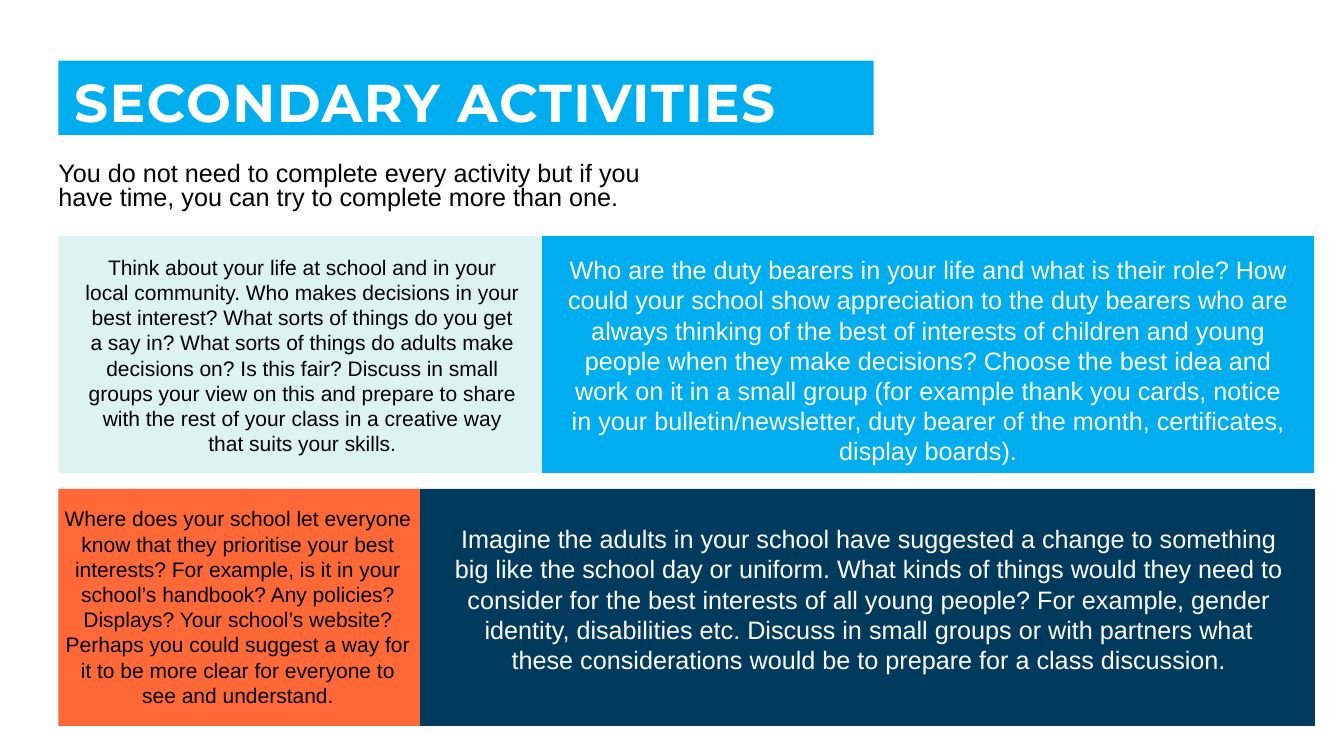
from dataclasses import dataclass

from pptx import Presentation
from pptx.dml.color import RGBColor as RGB
from pptx.enum.shapes import MSO_SHAPE as SHAPE
from pptx.enum.text import MSO_ANCHOR as ANCHOR, MSO_AUTO_SIZE as AUTO, PP_ALIGN as ALIGN
from pptx.util import Cm, Pt

TITLE = "SECONDARY ACTIVITIES"
INTRO = ("You do not need to complete every activity but if you have time, "
         "you can try to complete more than one.")


@dataclass(frozen=True)
class Theme:
    blue: str = "00AEEF"
    navy: str = "003B5E"
    mint: str = "DDF3F1"
    orange: str = "FF6937"
    white: str = "FFFFFF"
    black: str = "000000"
    heading: str = "Montserrat"
    body: str = "Arial"
    title_size: int = 38
    large: int = 18
    small: int = 15


T = Theme()

ROWS = [
    [
        dict(
            text="Think about your life at school and in your local community. "
                 "Who makes decisions in your best interest? What sorts of things "
                 "do you get a say in? What sorts of things do adults make "
                 "decisions on? Is this fair? Discuss in small groups your view on "
                 "this and prepare to share with the rest of your class in a "
                 "creative way that suits your skills.",
            width=12.19, fill=T.mint, color=T.black, size=T.small,
            margins=(0.66, 0.46, 0.55, 0)),
        dict(
            text="Who are the duty bearers in your life and what is their role? "
                 "How could your school show appreciation to the duty bearers who "
                 "are always thinking of the best of interests of children and "
                 "young people when they make decisions? Choose the best idea and "
                 "work on it in a small group (for example thank you cards, notice "
                 "in your bulletin/newsletter, duty bearer of the month, "
                 "certificates, display boards).",
            width=19.46, fill=T.blue, color=T.white, size=T.large,
            margins=(0.53, 0.46, 0.53, 0)),
    ],
    [
        dict(
            text="Where does your school let everyone know that they prioritise "
                 "your best interests? For example, is it in your school’s "
                 "handbook? Any policies? Displays? Your school’s website? Perhaps "
                 "you could suggest a way for it to be more clear for everyone to "
                 "see and understand.",
            width=9.12, fill=T.orange, color=T.black, size=T.small,
            margins=(0.15, 0.43, 0.22, 0)),
        dict(
            text="Imagine the adults in your school have suggested a change to "
                 "something big like the school day or uniform. What kinds of "
                 "things would they need to consider for the best interests of all "
                 "young people? For example, gender identity, disabilities etc. "
                 "Discuss in small groups or with partners what these "
                 "considerations would be to prepare for a class discussion.",
            width=22.55, fill=T.navy, color=T.white, size=T.large,
            margins=(0.84, 0.87, 0.78, 0)),
    ],
]

LEFT, TOP = 1.47, 5.95
PANEL_HEIGHT, ROW_GAP = 5.97, 0.4


def put_text(s, text, *, size, color, font=T.body, bold=False, align=ALIGN.LEFT,
             anchor=ANCHOR.TOP, margins=(0, 0, 0, 0), line=1.0, tracking=0):
    tf = s.text_frame
    tf.word_wrap = True
    tf.auto_size = AUTO.NONE
    tf.vertical_anchor = anchor
    tf.margin_left, tf.margin_top, tf.margin_right, tf.margin_bottom = map(Cm, margins)
    p = tf.paragraphs[0]
    p.alignment = align
    p.line_spacing = line
    p.space_before = Pt(0)
    r = p.add_run()
    r.text = text
    r.font.name = font
    r.font.size = Pt(size)
    r.font.bold = bold
    r.font.color.rgb = RGB.from_string(color)
    if tracking:
        r.font._element.set("spc", str(tracking * 100))


def fill_shape(s, color):
    s.fill.solid()
    s.fill.fore_color.rgb = RGB.from_string(color)
    s.line.fill.background()


def add_panel(slide, x, y, *, text, width, fill, **text_format):
    s = slide.shapes.add_shape(SHAPE.RECTANGLE, Cm(x), Cm(y), Cm(width), Cm(PANEL_HEIGHT))
    s.shadow.inherit = False
    fill_shape(s, fill)
    put_text(s, text, align=ALIGN.CENTER, **text_format)


def main():
    prs = Presentation()
    prs.slide_width, prs.slide_height = Cm(33.87), Cm(19.05)
    slide = prs.slides.add_slide(prs.slide_layouts[5])

    title = slide.shapes.title
    title.left, title.top, title.width, title.height = map(Cm, (LEFT, 1.53, 20.55, 1.87))
    fill_shape(title, T.blue)
    put_text(title, TITLE, size=T.title_size, color=T.white, font=T.heading, bold=True,
             anchor=ANCHOR.MIDDLE, margins=(0.4, 0.4, 0.3, 0), line=0.9, tracking=1)

    intro = slide.shapes.add_textbox(Cm(LEFT), Cm(3.97), Cm(15.77), Cm(1.57))
    put_text(intro, INTRO, size=T.large, color=T.black,
             margins=(0, 0.13, 0.25, 0.13), line=0.8)

    for i, row in enumerate(ROWS):
        x, y = LEFT, TOP + i * (PANEL_HEIGHT + ROW_GAP)
        for panel in row:
            add_panel(slide, x, y, **panel)
            x += panel["width"]

    prs.save("out.pptx")


if __name__ == "__main__":
    main()
